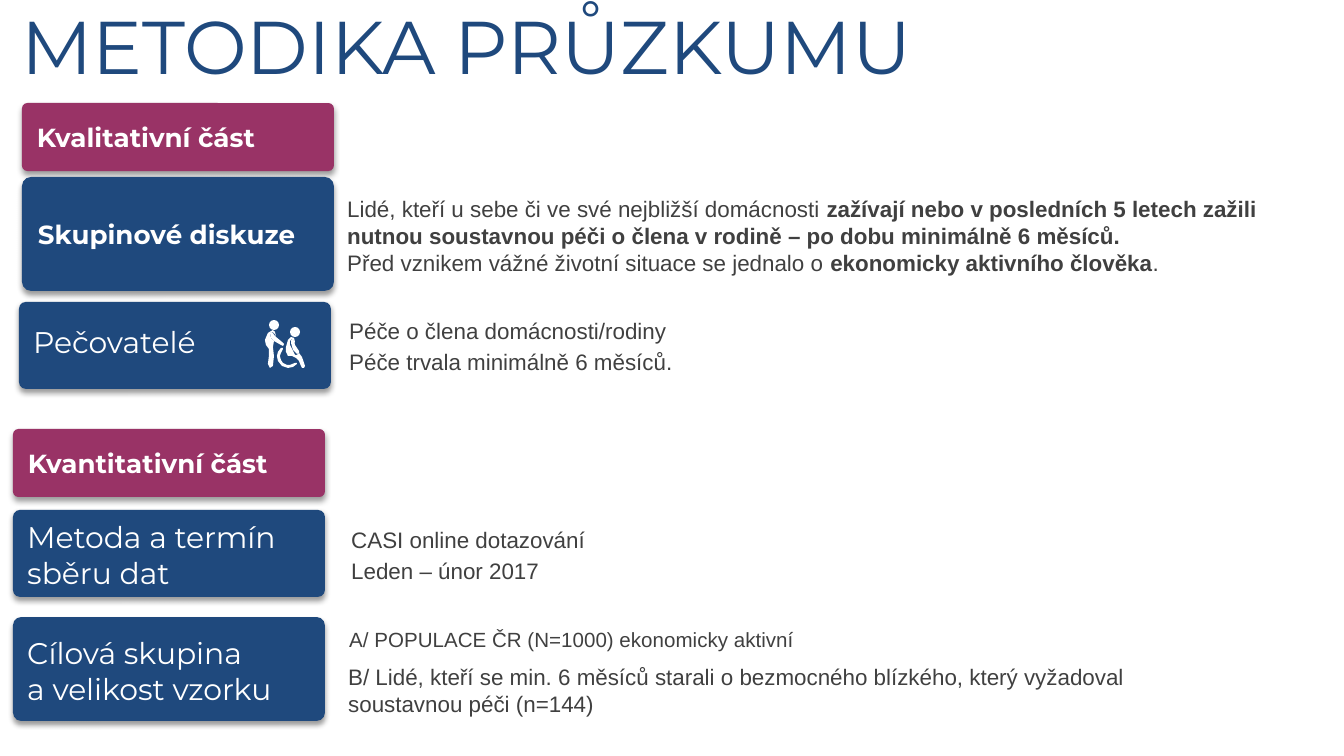
from lxml.etree import SubElement
from pptx import Presentation
from pptx.dml.color import RGBColor
from pptx.enum.shapes import MSO_SHAPE as Shape
from pptx.enum.text import MSO_ANCHOR as Anchor, PP_ALIGN as Align
from pptx.oxml.ns import qn
from pptx.util import Emu, Pt

PX = 914400 / 134.4
NAVY = RGBColor(0x1F, 0x49, 0x7D)
PLUM = RGBColor(0x99, 0x33, 0x66)
GREY = RGBColor(0x40, 0x40, 0x40)
WHITE = RGBColor(0xFF, 0xFF, 0xFF)
HEAD = "Montserrat"
BODY = "Arial"
BREAK = None

CARDS = [
    ((22, 103, 312, 68), PLUM, "Kvalitativní část"),
    ((22, 177, 312, 114), NAVY, "Skupinové diskuze"),
    ((19, 302, 312, 87), NAVY, ""),
    ((13, 429, 312, 68), PLUM, "Kvantitativní část"),
    ((13, 510, 312, 87), NAVY, ""),
    ((13, 617, 312, 104), NAVY, ""),
]

LABELS = [
    ((8, 0, 1336, 96), HEAD, 40, NAVY, [[("METODIKA PRŮZKUMU", False)]]),
    ((20, 324, 230, 40), HEAD, 16, WHITE, [[("Pečovatelé", False)]]),
    ((14, 519, 310, 76), HEAD, 16, WHITE,
     [[("Metoda a termín", False), BREAK, ("sběru dat", False)]]),
    ((14, 635, 310, 76), HEAD, 16, WHITE,
     [[("Cílová skupina", False), BREAK, ("a velikost vzorku", False)]]),
    ((334, 195, 984, 86), BODY, 12, GREY, [
        [("Lidé, kteří u sebe či ve své nejbližší domácnosti ", False),
         ("zažívají nebo v posledních 5 letech zažili nutnou soustavnou péči "
          "o člena v rodině – po dobu minimálně 6 měsíců.", True)],
        [("Před vznikem vážné životní situace se jednalo o ", False),
         ("ekonomicky aktivního člověka", True), (".", False)]]),
    ((336, 317, 728, 64), BODY, 12, GREY, [
        [("Péče o člena domácnosti/rodiny", False)],
        [("Péče trvala minimálně 6 měsíců.", False)]]),
    ((338, 526, 728, 63), BODY, 12, GREY, [
        [("CASI online dotazování", False)],
        [("Leden – únor 2017", False)]]),
    ((336, 627, 798, 32), BODY, 11, GREY,
     [[("A/ POPULACE ČR (N=1000) ekonomicky aktivní", False)]]),
    ((335, 663, 863, 60), BODY, 12, GREY,
     [[("B/ Lidé, kteří se min. 6 měsíců starali o bezmocného blízkého, "
        "který vyžadoval soustavnou péči (n=144)", False)]]),
]
SPACED = ("Péče trvala", "Leden")

HEADS = [(269, 320, 10, 10), (290, 327, 10, 10)]
SITTER = [(305, 366), (302, 357), (299, 353), (297, 355), (295, 355),
          (293, 351), (290, 345), (290, 341), (292, 339), (294, 341),
          (295, 345), (295, 342), (294, 338), (291, 337), (288, 340),
          (286, 347), (286, 352), (288, 356), (292, 356), (296, 358),
          (299, 361), (301, 366), (302, 368), (304, 368)]
LAP = [(294, 341), (293, 339), (291, 340), (291, 343), (293, 350),
       (295, 352), (297, 354), (299, 353), (299, 351), (295, 345)]
WHEEL = [(290, 365), (287, 365), (283, 363), (281, 360), (280, 356),
         (281, 353), (283, 349), (283, 348), (281, 348), (278, 352),
         (277, 356), (278, 361), (282, 366), (288, 368), (293, 367),
         (297, 364), (297, 363), (295, 363)]
CARER = [(269, 349), (269, 356), (268, 364), (270, 368), (273, 366),
         (274, 356), (273, 347), (274, 341), (271, 338), (270, 333),
         (272, 332), (274, 333), (276, 336), (275, 332), (273, 330),
         (268, 333), (265, 340), (266, 345)]
ARM = [(273, 333), (271, 332), (270, 333), (271, 338), (274, 341),
       (281, 345), (283, 346), (284, 344), (282, 342), (276, 337),
       (274, 335)]


def emu(box):
    return [Emu(round(n * PX)) for n in box]


def paint(shape, color):
    shape.shadow.inherit = False
    shape.fill.solid()
    shape.fill.fore_color.rgb = color
    shape.line.fill.background()


def shade(shape):
    fx = shape._element.spPr.find(qn("a:effectLst"))
    glow = SubElement(fx, qn("a:outerShdw"), blurRad=str(Pt(3)),
                      dist=str(Pt(2)), dir="5400000", rotWithShape="0")
    tone = SubElement(glow, qn("a:srgbClr"), val="000000")
    SubElement(tone, qn("a:alpha"), val="40000")


def write(para, text, font, size, color, bold):
    run = para.add_run()
    run.text = text
    run.font.name = font
    run.font.size = Pt(size)
    run.font.color.rgb = color
    run.font.bold = bold


def add_card(slide, box, color, text):
    card = slide.shapes.add_shape(Shape.ROUNDED_RECTANGLE, *emu(box))
    card.adjustments[0] = 0.08
    paint(card, color)
    shade(card)
    if text:
        frame = card.text_frame
        frame.word_wrap = True
        frame.vertical_anchor = Anchor.MIDDLE
        para = frame.paragraphs[0]
        para.alignment = Align.LEFT
        write(para, text, HEAD, 14, WHITE, True)


def add_label(slide, box, font, size, color, lines):
    frame = slide.shapes.add_textbox(*emu(box)).text_frame
    frame.word_wrap = True
    frame.margin_top = 0
    for i, line in enumerate(lines):
        para = frame.add_paragraph() if i else frame.paragraphs[0]
        if line[0][0].startswith(SPACED):
            para.space_before = Pt(2.4)
        for part in line:
            if part is BREAK:
                para.add_line_break()
                gap = para._p.findall(qn("a:br"))[-1]
                SubElement(gap, qn("a:rPr"), sz=str(size * 100))
            else:
                write(para, part[0], font, size, color, part[1])


def add_icon(slide):
    icon = slide.shapes.add_group_shape().shapes
    for box in HEADS:
        paint(icon.add_shape(Shape.OVAL, *emu(box)), WHITE)
    for dots in (SITTER, LAP, WHEEL, CARER, ARM):
        pen = icon.build_freeform(*dots[0], scale=PX)
        pen.add_line_segments(dots[1:], close=True)
        paint(pen.convert_to_shape(), WHITE)


def main():
    deck = Presentation()
    deck.slide_width, deck.slide_height = emu((1344, 756))
    slide = deck.slides.add_slide(deck.slide_layouts[6])
    for card in CARDS:
        add_card(slide, *card)
    add_icon(slide)
    for label in LABELS:
        add_label(slide, *label)
    deck.save("out.pptx")


if __name__ == "__main__":
    main()
